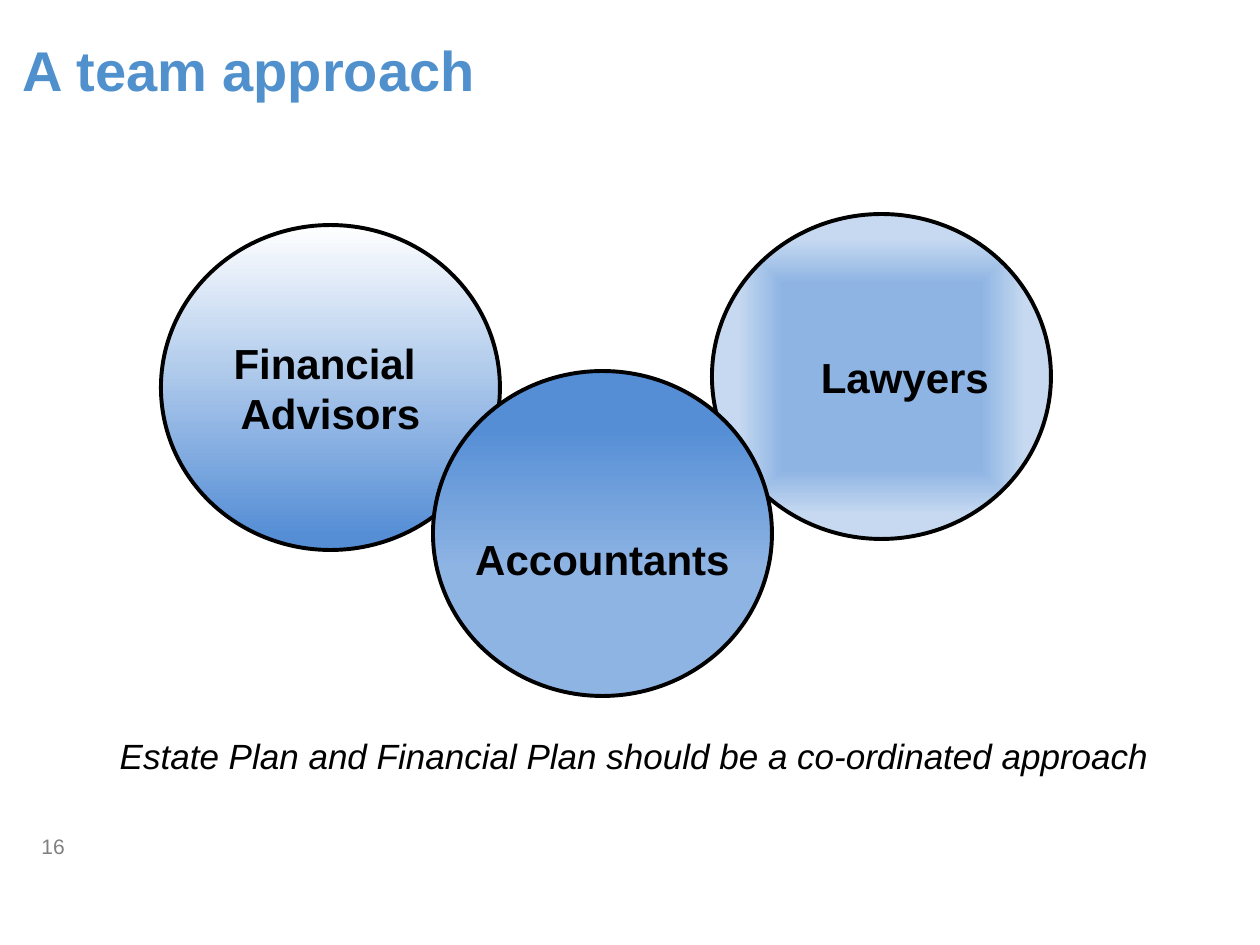
from lxml.etree import SubElement
from pptx import Presentation
from pptx.dml.color import RGBColor
from pptx.enum.shapes import MSO_SHAPE
from pptx.enum.text import MSO_ANCHOR, PP_ALIGN
from pptx.oxml.ns import qn
from pptx.util import Pt

PX = 914400 // 126
BLACK = RGBColor(0x00, 0x00, 0x00)
WHITE = RGBColor(0xFF, 0xFF, 0xFF)
GREY = RGBColor(0x80, 0x80, 0x80)
TITLE_BLUE = RGBColor(0x50, 0x91, 0xCD)
DEEP_BLUE = RGBColor(0x55, 0x8E, 0xD5)
MID_BLUE = RGBColor(0x8E, 0xB4, 0xE3)
PALE_BLUE = RGBColor(0xC6, 0xD9, 0xF1)

CIRCLE_SIZE = (339, 325)
TITLE_FONT = {"size": Pt(32), "bold": True}
CIRCLE_FONT = {"size": Pt(24), "bold": True}
CAPTION_FONT = {"size": Pt(20), "italic": True}
NUMBER_FONT = {"size": Pt(12)}


def emu(box):
    return [length * PX for length in box]


def write(shape, text, font_values, color, align=PP_ALIGN.LEFT,
          anchor=MSO_ANCHOR.MIDDLE, wrap=True):
    frame = shape.text_frame
    frame.word_wrap = wrap
    frame.vertical_anchor = anchor
    paragraph = frame.paragraphs[0]
    paragraph.text = text
    paragraph.alignment = align
    for run in paragraph.runs:
        for name, value in {"name": "Arial", **font_values}.items():
            setattr(run.font, name, value)
        run.font.color.rgb = color


def add_label(slide, box, text, font_values, color, **layout):
    write(slide.shapes.add_textbox(*emu(box)), text, font_values, color, **layout)


def fill_gradient(shape, stops, centred):
    """Fill from top to bottom, or from the centre outwards."""
    shape.fill.gradient()
    for stop, (position, color) in zip(shape.fill.gradient_stops, stops):
        stop.position = position
        stop.color.rgb = color
    if not centred:
        shape.fill.gradient_angle = 270
        return
    gradient = shape._element.spPr.find(qn("a:gradFill"))
    gradient.remove(gradient.find(qn("a:lin")))
    outward = SubElement(gradient, qn("a:path"), {"path": "shape"})
    SubElement(outward, qn("a:fillToRect"), dict.fromkeys("ltrb", "50000"))


def add_circle(slide, left, top, text, stops, align=PP_ALIGN.CENTER,
               centred=False, text_drop=0):
    circle = slide.shapes.add_shape(
        MSO_SHAPE.OVAL, *emu((left, top, *CIRCLE_SIZE)))
    circle.shadow.inherit = False
    fill_gradient(circle, stops, centred)
    circle.line.color.rgb = BLACK
    circle.line.width = Pt(2.25)
    write(circle, text, CIRCLE_FONT, BLACK, align=align, wrap=False)
    circle.text_frame.margin_top += 2 * text_drop * PX


def add_team(slide, left, top):
    """Three overlapping circles, the accountants in front."""
    add_circle(slide, left, top + 11, "Financial \vAdvisors",
               [(0, WHITE), (0.96, DEEP_BLUE)])
    add_circle(slide, left + 551, top, "Lawyers",
               [(0.57, MID_BLUE), (0.85, PALE_BLUE)],
               align=PP_ALIGN.RIGHT, centred=True)
    add_circle(slide, left + 272, top + 157, "Accountants",
               [(0.17, DEEP_BLUE), (0.61, MID_BLUE)], text_drop=25)


def main():
    presentation = Presentation()
    presentation.slide_width, presentation.slide_height = emu((1260, 945))
    slide = presentation.slides.add_slide(presentation.slide_layouts[6])
    add_label(slide, (29, 827, 178, 38), "16", NUMBER_FONT, GREY,
              anchor=MSO_ANCHOR.TOP)
    add_label(slide, (10, -10, 1270, 158), "A team approach",
              TITLE_FONT, TITLE_BLUE)
    add_team(slide, 161, 214)
    add_label(slide, (84, 734, 1101, 44),
              "Estate Plan and Financial Plan should be a co-ordinated approach",
              CAPTION_FONT, BLACK, align=PP_ALIGN.CENTER)
    presentation.save("out.pptx")


if __name__ == "__main__":
    main()
